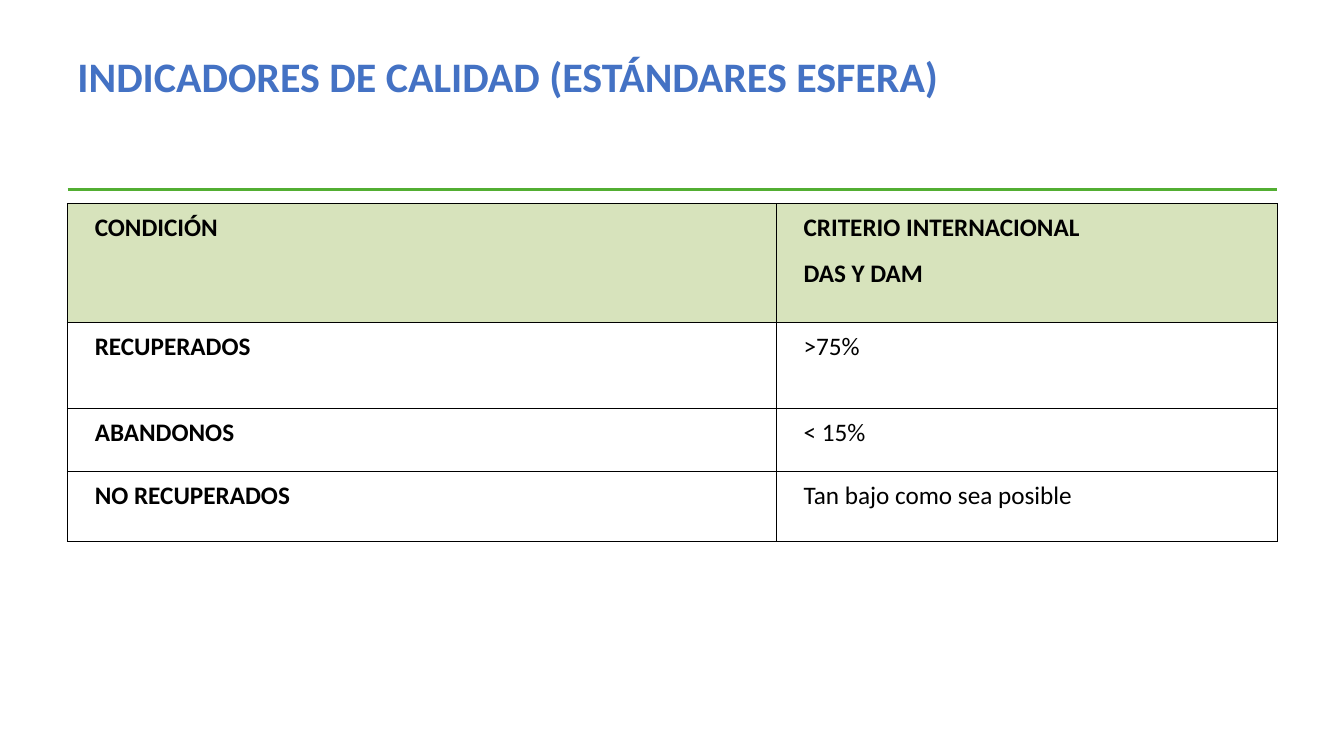
from lxml import etree
from pptx import Presentation
from pptx.dml.color import RGBColor
from pptx.enum.shapes import MSO_CONNECTOR
from pptx.enum.text import MSO_ANCHOR, PP_ALIGN
from pptx.oxml.ns import qn
from pptx.util import Inches, Pt

# Content
TITLE = "INDICADORES DE CALIDAD (ESTÁNDARES ESFERA)"
ROWS = [
    ("CONDICIÓN", "CRITERIO INTERNACIONAL\nDAS Y DAM"),
    ("RECUPERADOS", ">75%"),
    ("ABANDONOS", "< 15%"),
    ("NO RECUPERADOS", "Tan bajo como sea posible"),
]

# Layout and style
WIDTH, HEIGHT = 13.33, 7.5
LEFT, CONTENT_W = 0.67, 12
TITLE_TOP, TITLE_H = 0.4, 1.45
RULE_Y, TABLE_TOP = 1.88, 2.02
COLS = [7.03, 4.97]
ROW_HEIGHTS = [1.18, 0.85, 0.63, 0.69]
FONT = "Calibri"
COLORS = {"title": "4472C4", "rule": "52AE32", "header": "D7E3BC", "ink": "000000"}
JUSTIFY, TOP = PP_ALIGN.JUSTIFY, MSO_ANCHOR.TOP
STRAIGHT = MSO_CONNECTOR.STRAIGHT


def rgb(name):
    return RGBColor.from_string(COLORS[name])


def style_runs(p, size, color, bold):
    for r in p.runs:
        r.font.name, r.font.size, r.font.bold = FONT, Pt(size), bold
        r.font.color.rgb = rgb(color)


def add_borders(cell):
    tcPr = cell._tc.get_or_add_tcPr()
    for i, side in enumerate(("lnL", "lnR", "lnT", "lnB")):
        ln = etree.Element(qn("a:" + side), w=str(Pt(1)))
        fill = etree.SubElement(ln, qn("a:solidFill"))
        etree.SubElement(fill, qn("a:srgbClr"), val=COLORS["ink"])
        tcPr.insert(i, ln)


def fill_cell(cell, text, header, bold):
    cell.margin_left = cell.margin_right = Inches(0.07)
    cell.margin_top = cell.margin_bottom = 0
    cell.vertical_anchor = TOP
    if header:
        cell.fill.solid()
        cell.fill.fore_color.rgb = rgb("header")
    else:
        cell.fill.background()
    add_borders(cell)
    cell.text_frame.text = text
    for p in cell.text_frame.paragraphs:
        p.alignment, p.line_spacing, p.space_after = JUSTIFY, 1.3, Pt(4)
        p._p.get_or_add_pPr().set("marL", str(Inches(0.2)))
        style_runs(p, 18, "ink", bold)


prs = Presentation()
prs.slide_width, prs.slide_height = Inches(WIDTH), Inches(HEIGHT)
s = prs.slides.add_slide(prs.slide_layouts[6])

# Green rule
y = Inches(RULE_Y)
rule = s.shapes.add_connector(STRAIGHT, Inches(LEFT), y, Inches(LEFT + CONTENT_W), y)
rule.line.color.rgb, rule.line.width = rgb("rule"), Pt(2)
etree.SubElement(rule._element.spPr, qn("a:effectLst"))

# Title
sp = s.shapes.add_textbox(Inches(LEFT), Inches(TITLE_TOP), Inches(CONTENT_W), Inches(TITLE_H))
tf = sp.text_frame
tf.word_wrap, tf.vertical_anchor = True, TOP
tf.text = TITLE
tf.paragraphs[0].line_spacing = 1.1
style_runs(tf.paragraphs[0], 30, "title", True)

# Indicator table
table = s.shapes.add_table(len(ROWS), len(COLS), Inches(LEFT), Inches(TABLE_TOP),
                           Inches(CONTENT_W), Inches(sum(ROW_HEIGHTS))).table
table.horz_banding = False
for column, w in zip(table.columns, COLS):
    column.width = Inches(w)
for i, (row, h) in enumerate(zip(table.rows, ROW_HEIGHTS)):
    row.height = Inches(h)
    for j, text in enumerate(ROWS[i]):
        fill_cell(table.cell(i, j), text, header=i == 0, bold=i == 0 or j == 0)

prs.save("out.pptx")
